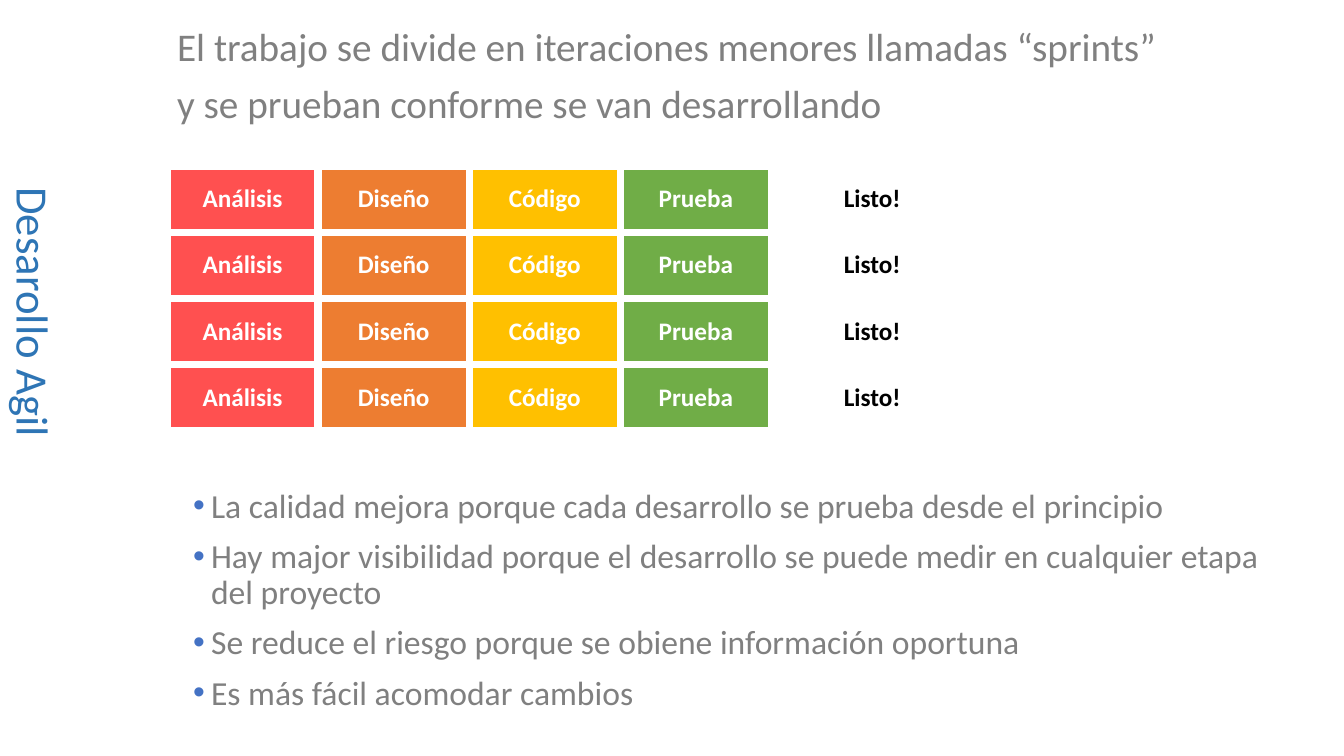
from lxml.etree import SubElement
from pptx import Presentation
from pptx.dml.color import RGBColor
from pptx.enum.text import MSO_ANCHOR, MSO_AUTO_SIZE, PP_ALIGN
from pptx.oxml.ns import qn
from pptx.util import Emu, Pt

WHITE = RGBColor(0xFF, 0xFF, 0xFF)
BLACK = RGBColor(0, 0, 0)
GRAY = RGBColor(0x80, 0x80, 0x80)
TITLE_BLUE = RGBColor(0x2E, 0x75, 0xB5)
BULLET_BLUE = RGBColor(0x44, 0x72, 0xC4)
RED = RGBColor(0xFF, 0x50, 0x50)
ORANGE = RGBColor(0xED, 0x7D, 0x31)
YELLOW = RGBColor(0xFF, 0xC0, 0x00)
GREEN = RGBColor(0x70, 0xAD, 0x47)

PHASES = [("Análisis", RED), ("Diseño", ORANGE), ("Código", YELLOW),
          ("Prueba", GREEN), ("Listo!", None)]
SPRINTS = 4
INTRO = ["El trabajo se divide en iteraciones menores llamadas “sprints”",
         "y se prueban conforme se van desarrollando"]
BENEFITS = [
    "La calidad mejora porque cada desarrollo se prueba desde el principio",
    "Hay major visibilidad porque el desarrollo se puede medir en cualquier etapa del proyecto",
    "Se reduce el riesgo porque se obiene información oportuna",
    "Es más fácil acomodar cambios",
]


def px(length):
    return Emu(round(length * 914400 / 100.8))


def place(shape, box):
    shape.left, shape.top, shape.width, shape.height = map(px, box)


def write(para, text, size, color, bold=False, align=PP_ALIGN.LEFT,
          spacing=None, before=0):
    para.alignment = align
    para.line_spacing = spacing
    para.space_before = Pt(before)
    span = para.add_run()
    span.text = text
    span.font.name = "Calibri"
    span.font.size = Pt(size)
    span.font.bold = bold
    span.font.color.rgb = color


def set_bullet(para, color=None, indent=0):
    properties = para._p.get_or_add_pPr()
    properties.set("marL", str(px(indent)))
    properties.set("indent", str(-px(indent)))
    if color is None:
        SubElement(properties, qn("a:buNone"))
        return
    bullet_color = SubElement(properties, qn("a:buClr"))
    SubElement(bullet_color, qn("a:srgbClr"), val=str(color))
    SubElement(properties, qn("a:buFont"), typeface="Arial")
    SubElement(properties, qn("a:buChar"), char="•")


def set_borders(cell, color, width):
    properties = cell._tc.get_or_add_tcPr()
    for index, side in enumerate(("a:lnL", "a:lnR", "a:lnT", "a:lnB")):
        line = SubElement(properties, qn(side), w=str(Pt(width)))
        fill = SubElement(line, qn("a:solidFill"))
        SubElement(fill, qn("a:srgbClr"), val=str(color))
        properties.insert(index, line)


def build_side_title(shape, box):
    left, top, width, height = box
    shift = (width - height) / 2
    place(shape, (left + shift, top - shift, height, width))
    shape.rotation = 90
    frame = shape.text_frame
    frame.auto_size = MSO_AUTO_SIZE.NONE
    frame.vertical_anchor = MSO_ANCHOR.BOTTOM
    frame.margin_bottom = px(7)
    write(frame.paragraphs[0], "Desarollo Agil", 32, TITLE_BLUE,
          align=PP_ALIGN.CENTER, spacing=0.9)


def build_text(shape, box, lines, size, bullet=None, indent=0):
    place(shape, box)
    frame = shape.text_frame
    frame.auto_size = MSO_AUTO_SIZE.NONE
    frame.vertical_anchor = MSO_ANCHOR.TOP
    for index, line in enumerate(lines):
        para = frame.add_paragraph() if index else frame.paragraphs[0]
        write(para, line, size, GRAY, spacing=0.9, before=10)
        set_bullet(para, bullet, indent)


def build_sprints(page, box):
    left, top, width, height = box
    table = page.shapes.add_table(SPRINTS, len(PHASES), *map(px, box)).table
    table.first_row = False
    table.horz_banding = False
    phase_width = width * 3 / 16
    for index, column in enumerate(table.columns):
        last = index == len(PHASES) - 1
        column.width = px(width / 4 if last else phase_width)
    for row in table.rows:
        row.height = px(height / SPRINTS)
        for cell, (name, color) in zip(row.cells, PHASES):
            set_borders(cell, WHITE, 6)
            if color is None:
                cell.fill.background()
            else:
                cell.fill.solid()
                cell.fill.fore_color.rgb = color
            cell.vertical_anchor = MSO_ANCHOR.MIDDLE
            write(cell.text_frame.paragraphs[0], name, 18,
                  BLACK if color is None else WHITE, bold=True,
                  align=PP_ALIGN.CENTER)


def main():
    deck = Presentation()
    deck.slide_width, deck.slide_height = px(1344), px(756)
    page = deck.slides.add_slide(deck.slide_layouts.get_by_name("Two Content"))
    title, intro, benefits = page.placeholders
    build_side_title(title, (0, 0, 93, 624))
    build_text(intro, (167, 23, 1085, 295), INTRO, 28)
    build_text(benefits, (183, 484, 1132, 265), BENEFITS, 24, BULLET_BLUE, 18)
    build_sprints(page, (167, 166, 806, 265))
    deck.save("out.pptx")


if __name__ == "__main__":
    main()
